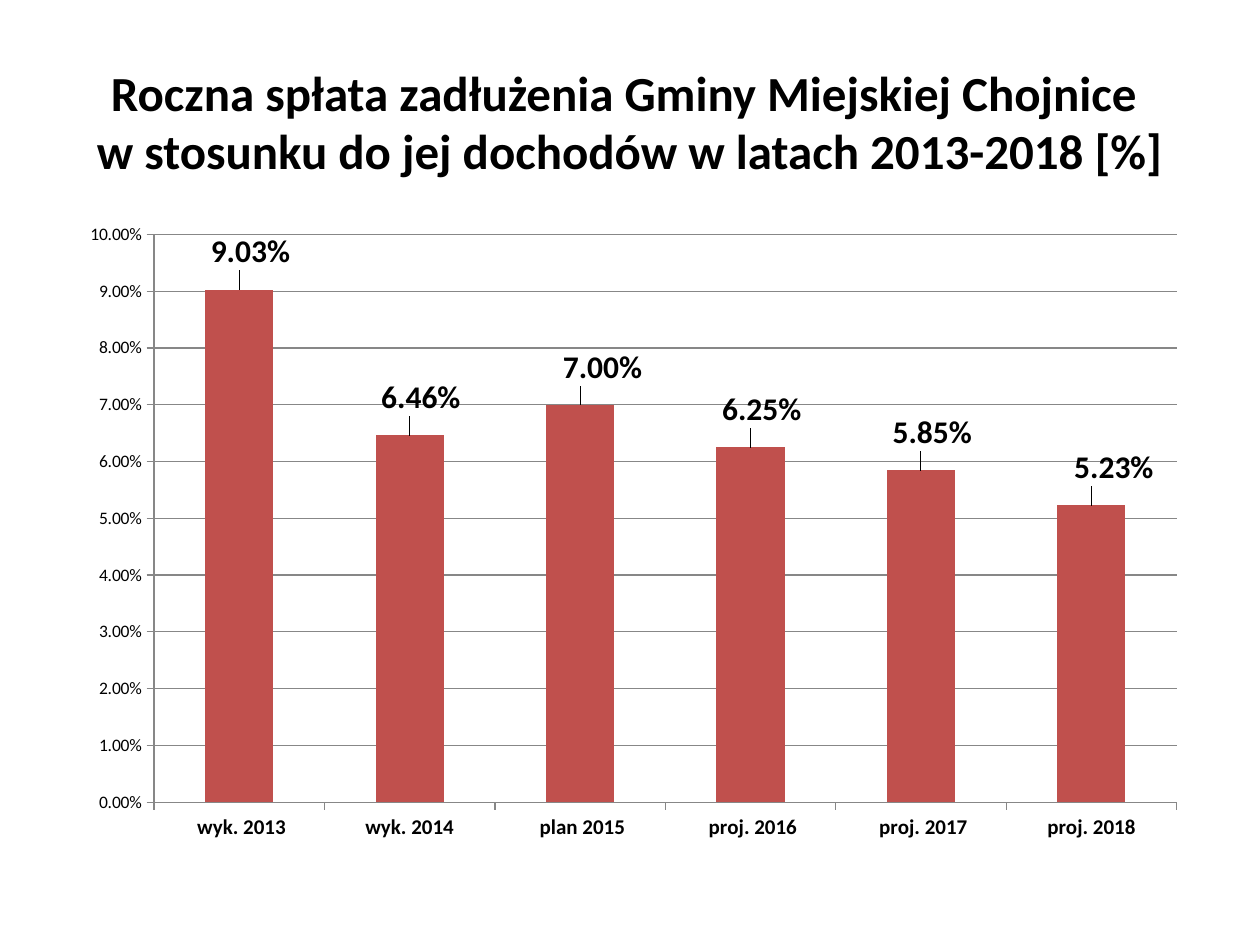
"""Build a slide charting yearly debt repayment against municipal income."""
from dataclasses import dataclass

from lxml import etree
from pptx import Presentation
from pptx import util as u
from pptx.chart import chart as charts
from pptx.chart import data as chart_data
from pptx.chart import series as chart_series
from pptx.dml import color as dml
from pptx.enum import chart as ce
from pptx.enum import text as te
from pptx.oxml import ns
from pptx.slide import Slide


@dataclass(frozen=True)
class Theme:
    font: str = "Calibri"
    ink: dml.RGBColor = dml.RGBColor(0, 0, 0)
    bar: dml.RGBColor = dml.RGBColor(0xC0, 0x50, 0x4D)
    grid: dml.RGBColor = dml.RGBColor(0x87, 0x87, 0x87)
    title: u.Pt = u.Pt(28)
    value: u.Pt = u.Pt(18)
    category: u.Pt = u.Pt(12)
    scale: u.Pt = u.Pt(10)


@dataclass(frozen=True)
class Year:
    name: str
    share: float
    label_dx: float
    label_dy: float


THEME = Theme()
PERCENT = "0.00%"
TITLE = ("Roczna spłata zadłużenia Gminy Miejskiej Chojnice \v"
         "w stosunku do jej dochodów w latach 2013-2018 [%]")
YEARS = (
    Year(" wyk. 2013", 0.0903, 0.01, -0.02),
    Year("wyk. 2014", 0.0646, 0.01, -0.02),
    Year(" plan 2015", 0.07, 0.02, -0.02),
    Year(" proj. 2016", 0.0625, 0.01, -0.02),
    Year(" proj. 2017", 0.0585, 0.01, -0.02),
    Year("proj. 2018", 0.0523, 0.02, -0.02),
)


def style_font(font, size: u.Pt, bold: bool = False) -> None:
    font.name, font.size, font.bold = THEME.font, size, bold
    font.color.rgb = THEME.ink


def make_layout(**settings: object) -> etree._Element:
    layout = etree.Element(ns.qn("c:layout"))
    manual = etree.SubElement(layout, ns.qn("c:manualLayout"))
    for name, value in settings.items():
        etree.SubElement(manual, ns.qn(f"c:{name}")).set("val", str(value))
    return layout


def add_title(page: Slide) -> None:
    box = page.shapes.add_textbox(u.Inches(0.51), u.Inches(0.29), u.Inches(8.97), u.Inches(1.34))
    frame = box.text_frame
    frame.word_wrap = True
    frame.vertical_anchor = te.MSO_ANCHOR.MIDDLE
    para = frame.paragraphs[0]
    para.text = TITLE
    para.alignment = te.PP_ALIGN.CENTER
    style_font(para.font, THEME.title, bold=True)


def style_axes(chart: charts.Chart) -> None:
    scale, categories = chart.value_axis, chart.category_axis
    scale.minimum_scale, scale.maximum_scale, scale.major_unit = 0, 0.1, 0.01
    scale.tick_labels.number_format = PERCENT
    scale.tick_labels.number_format_is_linked = False
    scale.has_major_gridlines = True
    style_font(scale.tick_labels.font, THEME.scale)
    style_font(categories.tick_labels.font, THEME.category, bold=True)
    for line in (scale.format.line, categories.format.line, scale.major_gridlines.format.line):
        line.color.rgb = THEME.grid
        line.width = u.Pt(0.75)
    for axis in (scale, categories):
        axis.major_tick_mark = ce.XL_TICK_MARK.OUTSIDE


def label_bars(series: chart_series.BarSeries) -> None:
    labels = series.data_labels
    labels.show_value = True
    labels.number_format, labels.number_format_is_linked = PERCENT, False
    labels.position = ce.XL_LABEL_POSITION.OUTSIDE_END
    style_font(labels.font, THEME.value, bold=True)
    for index in range(len(YEARS)):
        label = series.points[index].data_label
        style_font(label.font, THEME.value, bold=True)
        label.position = ce.XL_LABEL_POSITION.OUTSIDE_END
    for year, element in zip(YEARS, series._element.iter(ns.qn("c:dLbl"))):
        element.insert(1, make_layout(x=year.label_dx, y=year.label_dy))


def add_repayment_chart(page: Slide) -> None:
    data = chart_data.CategoryChartData(number_format=PERCENT)
    data.categories = [year.name for year in YEARS]
    data.add_series("Series 1", [year.share for year in YEARS])
    chart = page.shapes.add_chart(
        ce.XL_CHART_TYPE.COLUMN_CLUSTERED, u.Inches(0.59), u.Inches(1.47),
        u.Inches(8.9), u.Inches(5.51), data).chart
    chart.has_legend = chart.has_title = False
    style_font(chart.font, THEME.scale)
    style_axes(chart)
    plot = chart.plots[0]
    plot.gap_width, plot.vary_by_categories = 150, False
    series = plot.series[0]
    series.format.fill.solid()
    series.format.fill.fore_color.rgb = THEME.bar
    label_bars(series)
    area = plot._element.getparent()
    for old_layout in area.findall(ns.qn("c:layout")):
        area.remove(old_layout)
    area.insert(0, make_layout(layoutTarget="inner", xMode="edge", yMode="edge",
                               x=0.071, y=0.071, w=0.912, h=0.818))


def main() -> None:
    deck = Presentation()
    deck.slide_width, deck.slide_height = u.Inches(10), u.Inches(7.5)
    page = deck.slides.add_slide(deck.slide_layouts[6])
    add_title(page)
    add_repayment_chart(page)
    deck.save("out.pptx")


if __name__ == "__main__":
    main()
